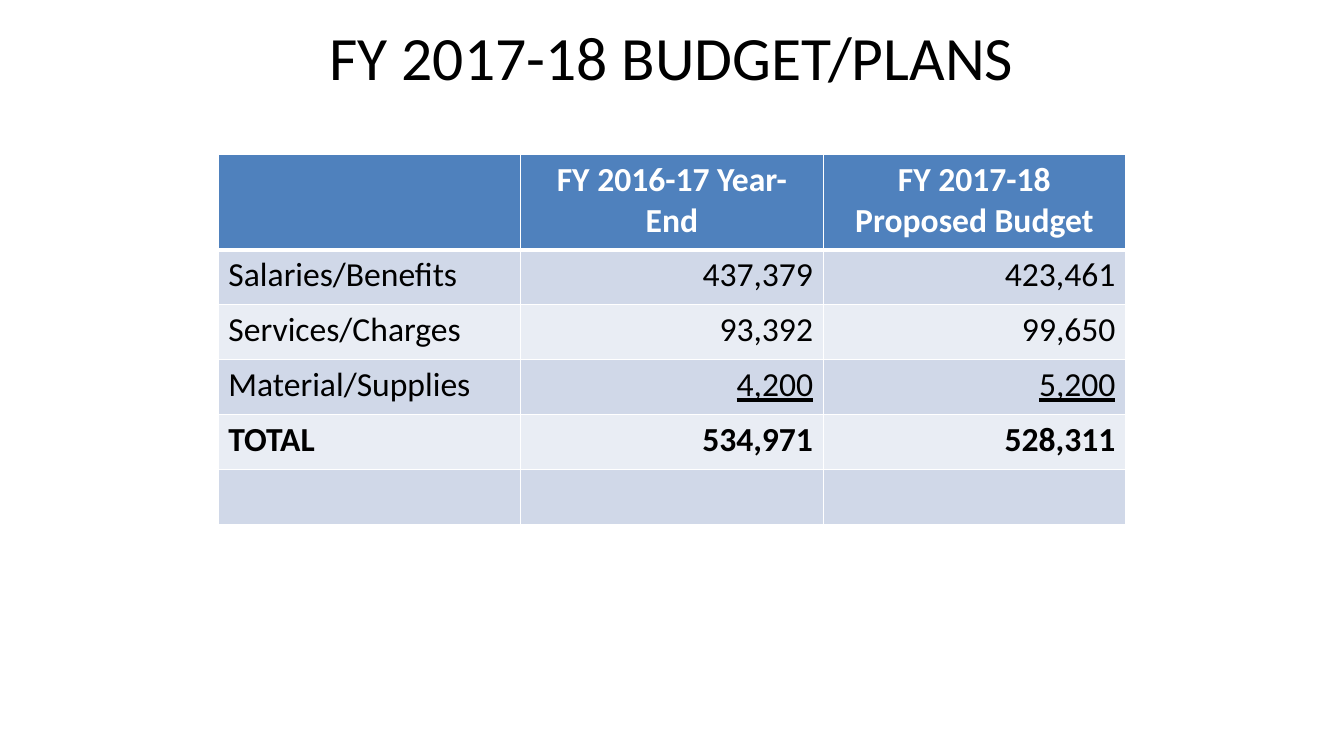
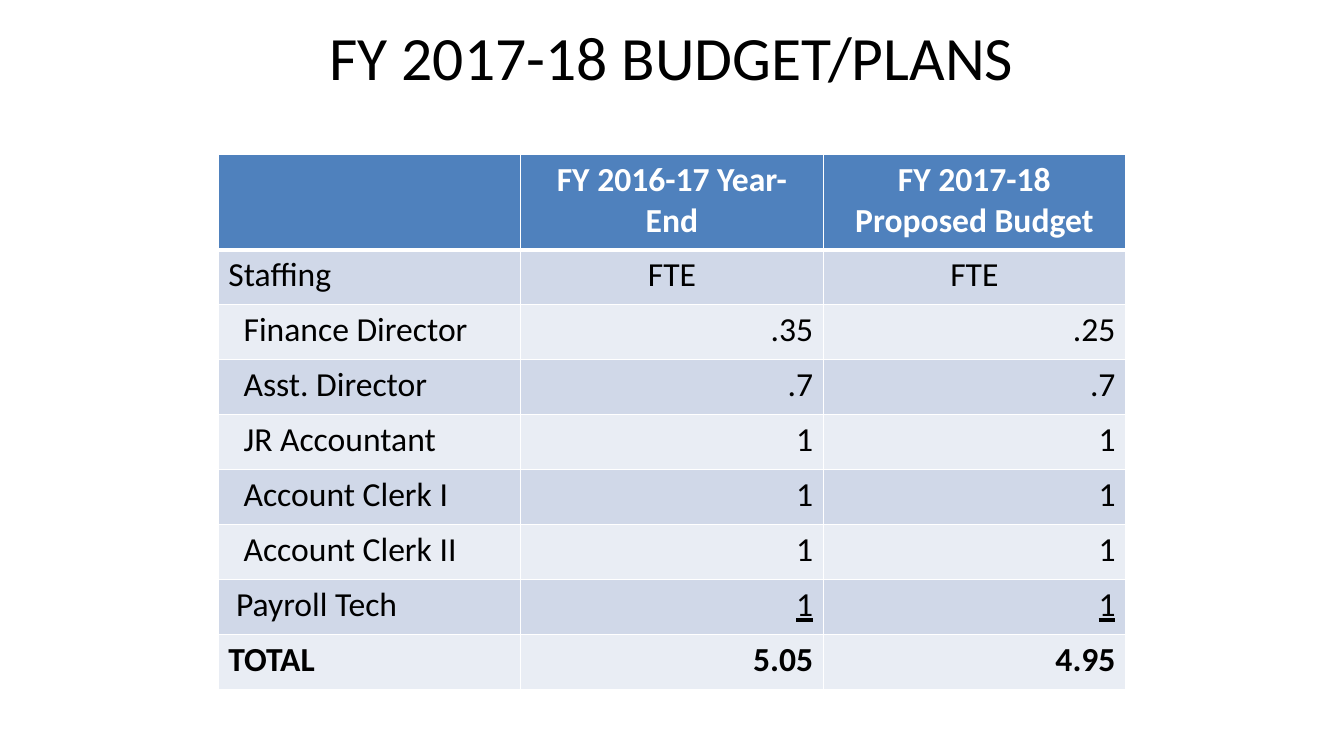
import pptx
import pptx.dml.color
import pptx.enum.text
import pptx.oxml
import pptx.oxml.ns
import pptx.util

Pt = pptx.util.Pt
ALIGN = pptx.enum.text.PP_ALIGN
MIDDLE = pptx.enum.text.MSO_ANCHOR.MIDDLE

# Shared style
FONT = "Calibri"
BLACK, WHITE, BLUE = "000000", "FFFFFF", "4F81BD"
BANDS = ("D0D8E8", "E9EDF4")
TITLE = "FY 2017-18 BUDGET/PLANS"
HEADER = ("", "FY 2016-17 Year- End", "FY 2017-18 Proposed Budget")
TITLE_BOX = (48, 13, 864, 54)
TABLE_BOX = (156, 110.4, 648)
HEADER_H, ROW_H = 68, 39.3
CELL_MARGIN, SPACE = 7.2, 5.4
RULE, HEADER_RULE = 1, 3


def color(value):
    return pptx.dml.color.RGBColor.from_string(value)


def write(tf, text, size=24, fill=BLACK, bold=False, underline=False, align=ALIGN.LEFT):
    p = tf.paragraphs[0]
    p.alignment = align
    if not text:
        return
    r = p.add_run()
    r.text = text
    r.font.name, r.font.size = FONT, Pt(size)
    r.font.bold, r.font.underline = bold, underline
    r.font.color.rgb = color(fill)


def set_borders(cell, top=RULE, bottom=RULE):
    tcPr = cell._tc.get_or_add_tcPr()
    for side, width in (("L", RULE), ("R", RULE), ("T", top), ("B", bottom)):
        tcPr.append(pptx.oxml.parse_xml(
            f'<a:ln{side} {pptx.oxml.ns.nsdecls("a")} w="{Pt(width)}">'
            f'<a:solidFill><a:srgbClr val="{WHITE}"/></a:solidFill></a:ln{side}>'))


def add_title(s, box):
    sp = s.shapes.add_textbox(*map(Pt, box))
    tf = sp.text_frame
    tf.word_wrap = True
    tf.vertical_anchor = MIDDLE
    tf.margin_top = tf.margin_bottom = 0
    write(tf, TITLE, size=44, align=ALIGN.CENTER)


def add_budget_table(s, box, rows):
    """Each row is label, two values and a dict of options."""
    left, top, width = box
    height = HEADER_H + ROW_H * len(rows)
    table = s.shapes.add_table(len(rows) + 1, len(HEADER), Pt(left), Pt(top),
                               Pt(width), Pt(height)).table
    for col in table.columns:
        col.width = Pt(width / len(HEADER))
    for i, row in enumerate(table.rows):
        row.height = Pt(ROW_H if i else HEADER_H)

    # Header row
    for j, text in enumerate(HEADER):
        cell = table.cell(0, j)
        set_borders(cell, bottom=HEADER_RULE)
        cell.fill.solid()
        cell.fill.fore_color.rgb = color(BLUE)
        write(cell.text_frame, text, fill=WHITE, bold=True, align=ALIGN.CENTER)

    # Banded body rows
    for i, (*texts, options) in enumerate(rows):
        for j, text in enumerate(texts):
            cell = table.cell(i + 1, j)
            set_borders(cell, top=RULE if i else HEADER_RULE)
            cell.fill.solid()
            cell.fill.fore_color.rgb = color(BANDS[i % 2])
            if j == 0:
                cell.margin_left = Pt(CELL_MARGIN + options.get("indent", 0))
            write(cell.text_frame, text, bold=options.get("bold", False),
                  underline=j > 0 and options.get("underline", False),
                  align=options.get("align", ALIGN.RIGHT) if j else ALIGN.LEFT)


def add_budget_slide(prs, rows):
    s = prs.slides.add_slide(prs.slide_layouts[6])
    add_title(s, TITLE_BOX)
    add_budget_table(s, TABLE_BOX, rows)


COSTS = [
    ("Salaries/Benefits", "437,379", "423,461", {}),
    ("Services/Charges", "93,392", "99,650", {}),
    ("Material/Supplies", "4,200", "5,200", {"underline": True}),
    ("TOTAL", "534,971", "528,311", {"bold": True}),
    ("", "", "", {}),
]
STAFFING = [
    ("Staffing", "FTE", "FTE", {"align": ALIGN.CENTER}),
    ("Finance Director", ".35", ".25", {"indent": 2 * SPACE}),
    ("Asst. Director", ".7", ".7", {"indent": 2 * SPACE}),
    ("JR Accountant", "1", "1", {"indent": 2 * SPACE}),
    ("Account Clerk I", "1", "1", {"indent": 2 * SPACE}),
    ("Account Clerk II", "1", "1", {"indent": 2 * SPACE}),
    ("Payroll Tech", "1", "1", {"indent": SPACE, "underline": True}),
    ("TOTAL", "5.05", "4.95", {"bold": True}),
]


def main():
    prs = pptx.Presentation()
    prs.slide_width, prs.slide_height = Pt(960), Pt(540)
    for rows in (COSTS, STAFFING):
        add_budget_slide(prs, rows)
    prs.save("out.pptx")


if __name__ == "__main__":
    main()
